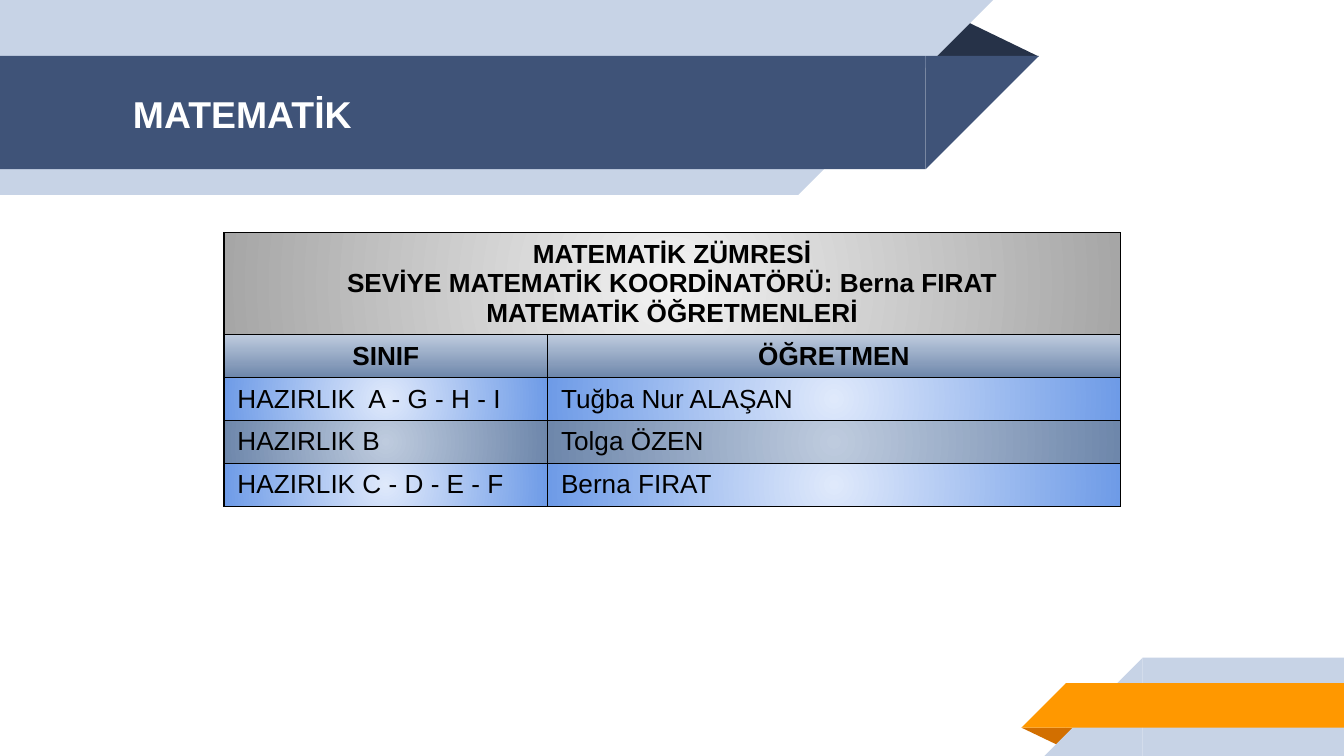
import lxml.etree
import pptx
import pptx.dml.color
import pptx.enum.shapes
import pptx.enum.text
import pptx.oxml.ns
import pptx.util

SHAPE = pptx.enum.shapes.MSO_SHAPE
ALIGN = pptx.enum.text.PP_ALIGN
MIDDLE = pptx.enum.text.MSO_ANCHOR.MIDDLE
TOP = pptx.enum.text.MSO_ANCHOR.TOP

COLORS = {
    "pale": "C7D3E6", "navy": "3F5378", "navy_fold": "263248",
    "orange": "FF9800", "orange_fold": "D26F00",
    "white": "FFFFFF", "black": "000000",
    "silver": "F2F2F2", "gray": "A6A6A6",
    "mist": "BECBDE", "steel": "6E87AB",
    "ice": "DFE9FB", "blue": "6E9BE7",
}
HEADING = "MATEMATİK ZÜMRESİ\nSEVİYE MATEMATİK KOORDİNATÖRÜ: Berna FIRAT\nMATEMATİK ÖĞRETMENLERİ"
CLASSES = [
    ("HAZIRLIK  A - G - H - I", "Tuğba Nur ALAŞAN"),
    ("HAZIRLIK B", "Tolga ÖZEN"),
    ("HAZIRLIK C - D - E - F", "Berna FIRAT"),
]


def part(box, x, y, width, height):
    """Return the box that takes these percentages of another box."""
    left, top, full_width, full_height = box
    return (round(left + full_width * x / 100), round(top + full_height * y / 100),
            round(full_width * width / 100), round(full_height * height / 100))


def write(frame, text, size=14, color="black", bold=False, align=ALIGN.LEFT):
    """Fill a text frame with formatted paragraphs."""
    frame.text = text
    for paragraph in frame.paragraphs:
        paragraph.alignment = align
        font = paragraph.font
        font.name, font.size, font.bold = "Arial", pptx.util.Pt(size), bold
        font.color.rgb = pptx.dml.color.RGBColor.from_string(COLORS[color])


def add_solid(slide, kind, box, color, rotation=0):
    """Add a plain preset shape without outline."""
    solid = slide.shapes.add_shape(kind, *box)
    solid.shadow.inherit = False
    solid.fill.solid()
    solid.fill.fore_color.rgb = pptx.dml.color.RGBColor.from_string(COLORS[color])
    solid.line.fill.background()
    solid.rotation = rotation
    return solid


def add_ribbon(slide, box, color, slant_right):
    """Add a band whose one end is cut at 45 degrees."""
    left, top, width, height = box
    band_left, tip_left = (left, left + width - height) if slant_right else (left + height, left)
    add_solid(slide, SHAPE.RECTANGLE, (band_left, top, width - height, height), color)
    add_solid(slide, SHAPE.RIGHT_TRIANGLE, (tip_left, top, height, height), color,
              90 if slant_right else 270)


def add_fold(slide, box, color, rotation=0):
    """Add the dark triangle behind a ribbon."""
    fold = add_solid(slide, SHAPE.ISOSCELES_TRIANGLE, box, color, rotation)
    fold.adjustments[0] = 0.32


def add_header(slide, box):
    """Place the ribbons and the title at the top."""
    add_fold(slide, part(box, 89, 9.7, 11, 19.3), "navy_fold")
    add_ribbon(slide, part(box, 0, 0, 95.6, 100), "pale", True)
    add_ribbon(slide, part(box, 0, 28.7, 100, 58), "navy", True)
    title = slide.shapes.title
    slide.shapes._spTree.append(title._element)
    title.left, title.top, title.width, title.height = part(box, 11.5, 29.3, 74.4, 58)
    frame = title.text_frame
    frame.margin_left = frame.margin_right = pptx.util.Inches(0.1)
    frame.margin_top = frame.margin_bottom = pptx.util.Inches(0.1)
    frame.vertical_anchor, frame.word_wrap = MIDDLE, True
    write(frame, "MATEMATİK", size=20, color="white", bold=True)


def add_footer(slide, box):
    """Place the ribbons in the lower right corner."""
    add_fold(slide, part(box, 0, 71.2, 18, 19.2), "orange_fold", 180)
    add_ribbon(slide, part(box, 7.1, 0, 92.9, 100), "pale", False)
    add_ribbon(slide, part(box, 0, 26, 100, 45.2), "orange", False)


def paint_cell(cell, inner, outer, radial=True):
    """Give a cell thin borders and a two-colour gradient."""
    properties = cell._tc.get_or_add_tcPr()
    edge = f'<a:solidFill><a:srgbClr val="{COLORS["black"]}"/></a:solidFill>'
    borders = "".join(f'<a:{side} w="9525">{edge}</a:{side}>' for side in ("lnL", "lnR", "lnT", "lnB"))
    stops = "".join(f'<a:gs pos="{position}"><a:srgbClr val="{COLORS[color]}"/></a:gs>'
                    for position, color in ((0, inner), (100000, outer)))
    shade = ('<a:path path="circle"><a:fillToRect l="50000" t="50000" r="50000" b="50000"/></a:path>'
             if radial else '<a:lin ang="5400000" scaled="0"/>')
    xml = (f'<a:tcPr {pptx.oxml.ns.nsdecls("a")}>{borders}'
           f'<a:gradFill rotWithShape="1"><a:gsLst>{stops}</a:gsLst>{shade}</a:gradFill></a:tcPr>')
    for element in list(lxml.etree.fromstring(xml)):
        properties.append(element)


def add_teachers(slide, box):
    """Place the table of classes and teachers."""
    table = slide.shapes.add_table(2 + len(CLASSES), 4, *box).table
    table.first_row = table.horz_banding = False
    for column, share in zip(table.columns, (36.1, 15.6, 23.2, 25.1)):
        column.width = round(box[2] * share / 100)
    for index, row in enumerate(table.rows):
        row.height = round(box[3] * (15.75 if index else 37) / 100)
    table.cell(0, 0).merge(table.cell(0, 3))
    for index in range(1, len(table.rows)):
        table.cell(index, 1).merge(table.cell(index, 3))

    rows = [(HEADING,), ("SINIF", "ÖĞRETMEN"), *CLASSES]
    gradients = [("silver", "gray"), ("mist", "steel"), ("ice", "blue"), ("mist", "steel"), ("ice", "blue")]
    for index, (texts, gradient) in enumerate(zip(rows, gradients)):
        is_head = index < 2
        for column, text in enumerate(texts):
            cell = table.cell(index, column)
            cell.vertical_anchor = MIDDLE if index else TOP
            write(cell.text_frame, text, bold=is_head, align=ALIGN.CENTER if is_head else ALIGN.LEFT)
        for cell in table.rows[index].cells:
            paint_cell(cell, *gradient, radial=index != 1)


def main():
    """Build the slide and save it."""
    deck = pptx.Presentation()
    deck.slide_width = pptx.util.Inches(10)
    deck.slide_height = deck.slide_width * 9 // 16
    slide = deck.slides.add_slide(deck.slide_layouts[5])
    page = (0, 0, deck.slide_width, deck.slide_height)
    add_header(slide, part(page, 0, 0, 77.3, 25.8))
    add_footer(slide, part(page, 76, 87, 24, 13))
    add_teachers(slide, part(page, 16.67, 30.8, 66.7, 36.1))
    deck.save("out.pptx")


if __name__ == "__main__":
    main()
